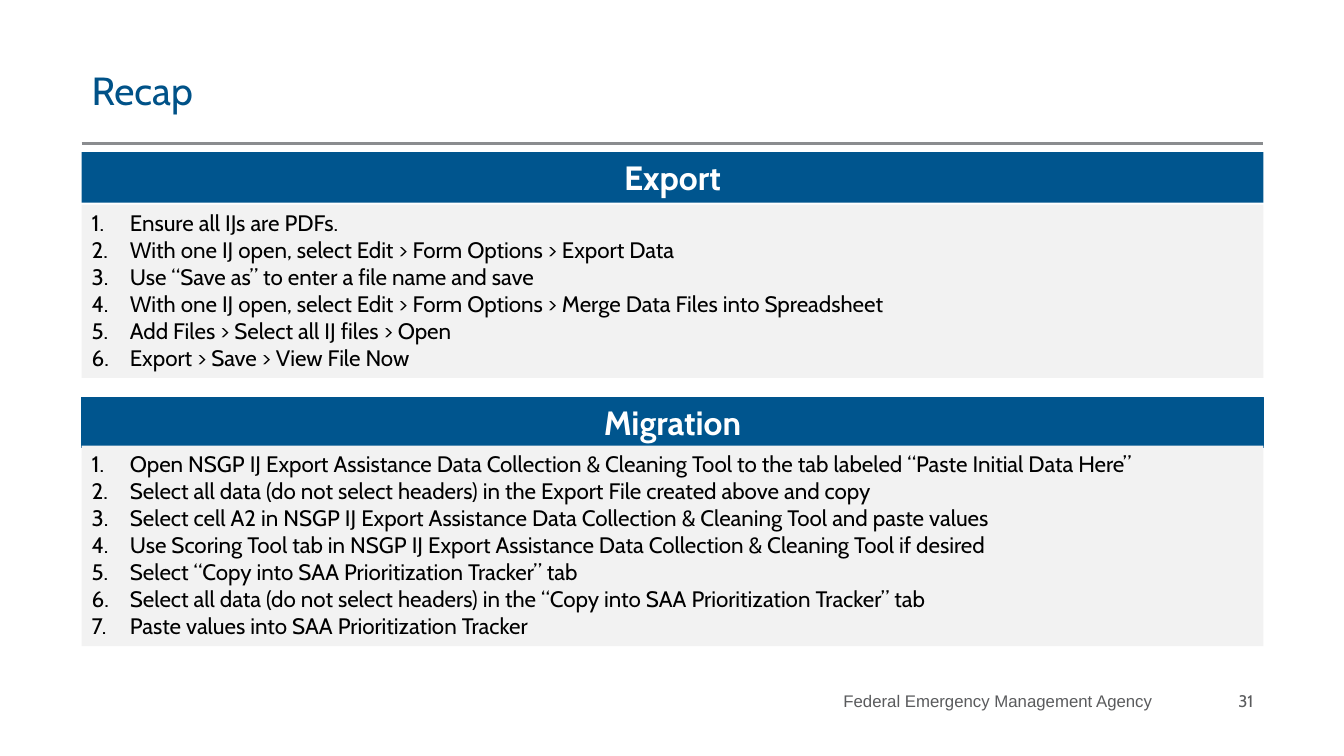
from lxml.etree import SubElement
from pptx import Presentation
from pptx.dml.color import RGBColor
from pptx.enum.shapes import MSO_CONNECTOR, MSO_SHAPE
from pptx.enum.text import MSO_ANCHOR, PP_ALIGN
from pptx.oxml.ns import qn
from pptx.util import Inches, Pt

TITLE = "Recap"
AGENCY = "Federal Emergency Management Agency"
PAGE = "31"
# heading, heading top, steps top, heading has an outline, steps
PANELS = [
    ("Export", 1.51, 2.03, False, [
        "Ensure all IJs are PDFs.",
        "With one IJ open, select Edit > Form Options > Export Data",
        "Use “Save as” to enter a file name and save",
        "With one IJ open, select Edit > Form Options > Merge Data Files into Spreadsheet",
        "Add Files > Select all IJ files > Open",
        "Export > Save > View File Now",
    ]),
    ("Migration", 3.94, 4.42, True, [
        "Open NSGP IJ Export Assistance Data Collection & Cleaning Tool to the tab labeled “Paste Initial Data Here”",
        "Select all data (do not select headers) in the Export File created above and copy",
        "Select cell A2 in NSGP IJ Export Assistance Data Collection & Cleaning Tool and paste values",
        "Use Scoring Tool tab in NSGP IJ Export Assistance Data Collection & Cleaning Tool if desired",
        "Select “Copy into SAA Prioritization Tracker” tab",
        "Select all data (do not select headers) in the “Copy into SAA Prioritization Tracker” tab",
        "Paste values into SAA Prioritization Tracker",
    ]),
]

TITLE_BLUE = RGBColor(0x00, 0x52, 0x88)
BAR_BLUE = RGBColor(0x00, 0x55, 0x8E)
PALE = RGBColor(0xF2, 0xF2, 0xF2)
RULE = RGBColor(0x8A, 0x8C, 0x8F)
GREY = RGBColor(0x5A, 0x5B, 0x5D)
BLACK = RGBColor(0, 0, 0)
WHITE = RGBColor(0xFF, 0xFF, 0xFF)

SLIDE_W, SLIDE_H = 13.33, 7.5
LEFT, WIDTH = 0.81, 11.72
RIGHT = LEFT + WIDTH
BAR_H, STEP_H, PADDING = 0.5, 0.27, 0.1
FOOT_Y, FOOT_H, PAGE_W, AGENCY_W = 6.75, 0.4, 1, 4.86
INDENT = Inches(0.38)


def write(sp, lines, size, color, font="Cabin", bold=False, align=PP_ALIGN.LEFT,
          anchor=MSO_ANCHOR.TOP, numbered=False):
    tf = sp.text_frame
    tf.word_wrap = True
    tf.vertical_anchor = anchor
    for i, line in enumerate(lines):
        p = tf.paragraphs[0] if i == 0 else tf.add_paragraph()
        p.alignment = align
        if numbered:
            pPr = p._p.get_or_add_pPr()
            pPr.set("marL", str(INDENT))
            pPr.set("indent", str(-INDENT))
            SubElement(pPr, qn("a:buFont"), typeface="+mj-lt")
            SubElement(pPr, qn("a:buAutoNum"), type="arabicPeriod")
        r = p.add_run()
        r.text = line
        r.font.name, r.font.size, r.font.bold = font, Pt(size), bold
        r.font.color.rgb = color


def add_text(slide, x, y, w, h, text, **style):
    sp = slide.shapes.add_textbox(*map(Inches, (x, y, w, h)))
    write(sp, [text], anchor=MSO_ANCHOR.MIDDLE, **style)


def add_block(slide, y, h, fill, outlined=False):
    sp = slide.shapes.add_shape(MSO_SHAPE.RECTANGLE, *map(Inches, (LEFT, y, WIDTH, h)))
    sp.shadow.inherit = False
    sp.fill.solid()
    sp.fill.fore_color.rgb = fill
    if outlined:
        sp.line.color.rgb = fill
        sp.line.width = Pt(0.75)
    else:
        sp.line.fill.background()
    return sp


def add_rule(slide, y):
    line = slide.shapes.add_connector(MSO_CONNECTOR.STRAIGHT,
                                      *map(Inches, (LEFT, y, RIGHT, y)))
    line.line.color.rgb = RULE
    line.line.width = Pt(2)
    SubElement(line._element.spPr, qn("a:effectLst"))


def main():
    prs = Presentation()
    prs.slide_width, prs.slide_height = Inches(SLIDE_W), Inches(SLIDE_H)
    slide = prs.slides.add_slide(prs.slide_layouts[6])

    add_rule(slide, 1.42)
    add_text(slide, LEFT, 0.49, WIDTH, 0.81, TITLE, size=28, color=TITLE_BLUE)
    page_x = RIGHT - PAGE_W
    add_text(slide, page_x - AGENCY_W, FOOT_Y, AGENCY_W, FOOT_H, AGENCY,
             size=12, color=GREY, font="Arial", align=PP_ALIGN.RIGHT)
    add_text(slide, page_x, FOOT_Y, PAGE_W, FOOT_H, PAGE,
             size=12, color=GREY, align=PP_ALIGN.RIGHT)

    for heading, bar_y, steps_y, outlined, steps in PANELS:
        bar = add_block(slide, bar_y, BAR_H, BAR_BLUE, outlined)
        write(bar, [heading], 24, WHITE, bold=True, align=PP_ALIGN.CENTER)
        body = add_block(slide, steps_y, PADDING + STEP_H * len(steps), PALE)
        write(body, steps, 16, BLACK, numbered=True)

    prs.save("out.pptx")


if __name__ == "__main__":
    main()
